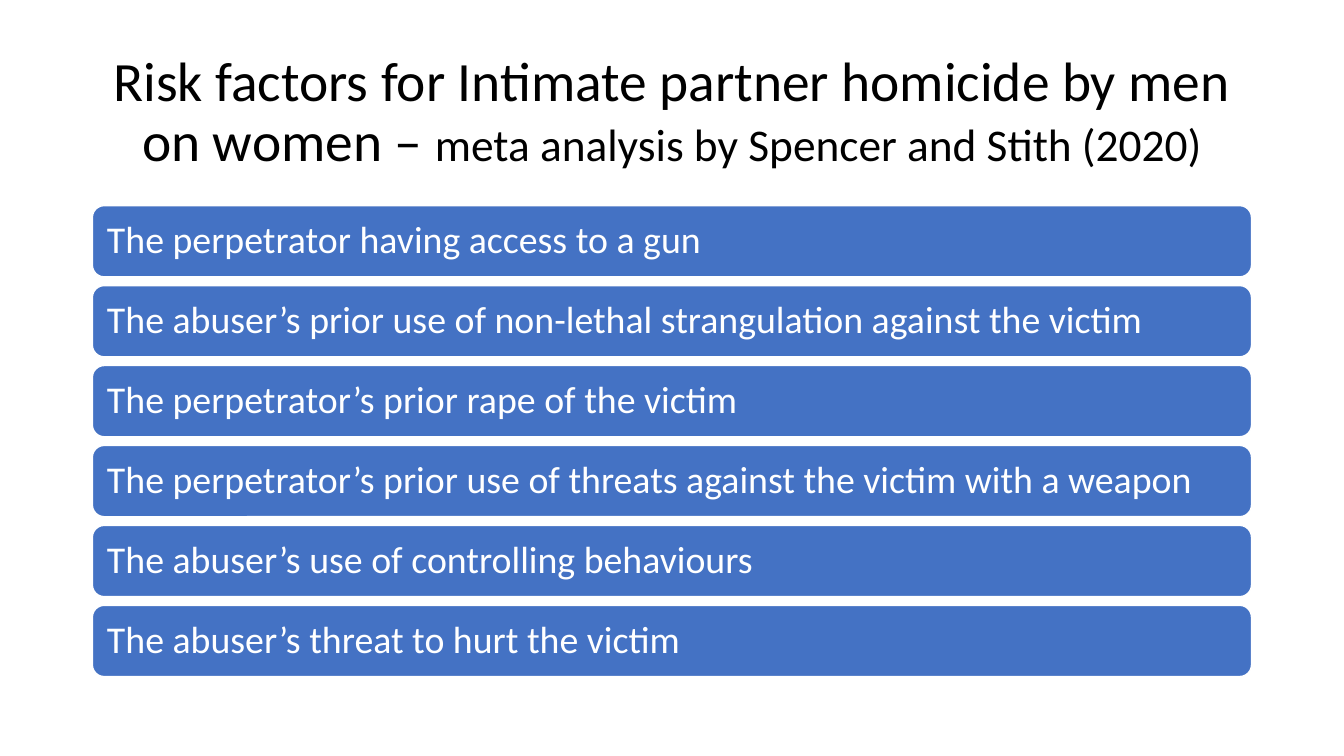
from dataclasses import dataclass

from pptx import Presentation
from pptx.dml.color import RGBColor
from pptx.enum import shapes, text
from pptx.util import Pt


@dataclass(frozen=True)
class Theme:
    font: str = "Calibri"
    ink: str = "000000"
    bar: str = "4472C4"
    light: str = "FFFFFF"
    title_size: float = 39.6
    subtitle_size: float = 32.4
    bar_size: float = 27
    line_spacing: float = 0.9


class SlideBuilder:
    def __init__(self, slide, theme):
        self.slide = slide
        self.theme = theme

    def format_run(self, run, size, color):
        run.font.name = self.theme.font
        run.font.size = Pt(size)
        run.font.color.rgb = RGBColor.from_string(color)

    def format_frame(self, frame, alignment):
        frame.word_wrap = True
        frame.auto_size = text.MSO_AUTO_SIZE.NONE
        frame.vertical_anchor = text.MSO_ANCHOR.MIDDLE
        paragraph = frame.paragraphs[0]
        paragraph.alignment = alignment
        paragraph.line_spacing = self.theme.line_spacing
        return paragraph

    def title(self, main, detail, left, top, width, height):
        shape = self.slide.shapes.title
        shape.left, shape.top = Pt(left), Pt(top)
        shape.width, shape.height = Pt(width), Pt(height)
        paragraph = self.format_frame(shape.text_frame, text.PP_ALIGN.CENTER)
        for wording, size in ((main, self.theme.title_size),
                              (detail, self.theme.subtitle_size)):
            run = paragraph.add_run()
            run.text = wording
            self.format_run(run, size, self.theme.ink)

    def bar(self, wording, left, top, width, height, inset=8):
        shape = self.slide.shapes.add_shape(
            shapes.MSO_SHAPE.ROUNDED_RECTANGLE,
            Pt(left), Pt(top), Pt(width), Pt(height))
        shape.shadow.inherit = False
        shape.fill.solid()
        shape.fill.fore_color.rgb = RGBColor.from_string(self.theme.bar)
        shape.line.color.rgb = RGBColor.from_string(self.theme.light)
        shape.line.width = Pt(1)
        frame = shape.text_frame
        frame.text = wording
        frame.margin_left = frame.margin_right = Pt(inset)
        frame.margin_top = frame.margin_bottom = Pt(inset)
        paragraph = self.format_frame(frame, text.PP_ALIGN.LEFT)
        self.format_run(paragraph.runs[0], self.theme.bar_size, self.theme.light)


RISK_FACTORS = [
    "The perpetrator having access to a gun",
    "The abuser’s prior use of non-lethal strangulation against the victim",
    "The perpetrator’s prior rape of the victim",
    "The perpetrator’s prior use of threats against the victim with a weapon",
    "The abuser’s use of controlling behaviours",
    "The abuser’s threat to hurt the victim",
]

LEFT, WIDTH = 66, 828
FIRST_BAR_TOP, BAR_HEIGHT, BAR_PITCH = 146.9, 50.9, 57.1


def main():
    presentation = Presentation()
    presentation.slide_width, presentation.slide_height = Pt(960), Pt(540)
    title_only = presentation.slide_layouts[5]
    builder = SlideBuilder(presentation.slides.add_slide(title_only), Theme())

    # Title
    builder.title("Risk factors for Intimate partner homicide by men on women – ",
                  "meta analysis by Spencer and Stith (2020)",
                  LEFT, 28.75, WIDTH, 104.4)

    # Risk factor bars
    for index, factor in enumerate(RISK_FACTORS):
        builder.bar(factor, LEFT, FIRST_BAR_TOP + index * BAR_PITCH,
                    WIDTH, BAR_HEIGHT)

    presentation.save("out.pptx")


if __name__ == "__main__":
    main()
